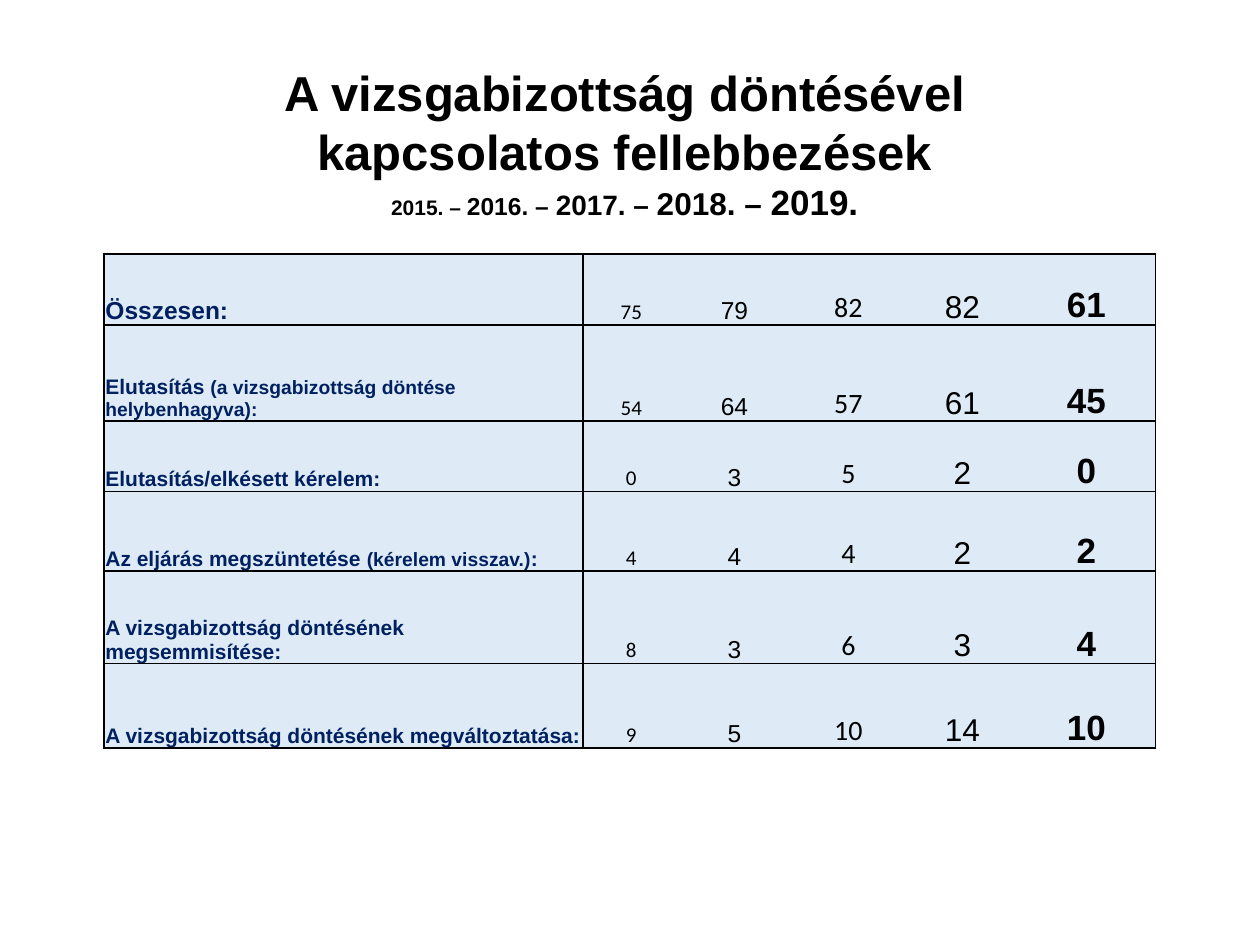
from lxml import etree
from pptx import Presentation
from pptx.dml.color import RGBColor
from pptx.enum.text import MSO_ANCHOR, MSO_AUTO_SIZE, PP_ALIGN
from pptx.oxml.ns import qn
from pptx.util import Pt

LEFT, CENTER = PP_ALIGN.LEFT, PP_ALIGN.CENTER
MIDDLE, BOTTOM = MSO_ANCHOR.MIDDLE, MSO_ANCHOR.BOTTOM
NO_FIT = MSO_AUTO_SIZE.NONE
COLORS = {"ink": "000000", "label": "002060", "cell": "DEEBF7"}
TITLE = "A vizsgabizottság döntésével kapcsolatos fellebbezések"
YEARS = [("2015. – ", 12), ("2016. – ", 14), ("2017. – ", 16),
         ("2018. – ", 18), ("2019.", 20)]
STYLES = [(12, "Calibri", False), (14, "Arial", False), (16, "Calibri", False),
          (18, "Arial", False), (20, "Arial", True)]
WIDTHS = [273.6, 55.3, 62.6, 67.6, 62.7, 79.2]
ROWS = [
    (40.5, [("Összesen:", 14)], [75, 79, 82, 82, 61]),
    (54.8, [("Elutasítás ", 12), ("(a vizsgabizottság döntése helybenhagyva):", 11)],
     [54, 64, 57, 61, 45]),
    (40.3, [("Elutasítás/elkésett kérelem:", 12)], [0, 3, 5, 2, 0]),
    (45.6, [("Az eljárás megszüntetése ", 12), ("(kérelem visszav.)", 11), (":", 12)],
     [4, 4, 4, 2, 2]),
    (52.8, [("A vizsgabizottság döntésének megsemmisítése:", 12)], [8, 3, 6, 3, 4]),
    (48.3, [("A vizsgabizottság döntésének megváltoztatása:", 12)], [9, 5, 10, 14, 10]),
]


class Deck:
    def __init__(self):
        self.prs = Presentation()
        self.prs.slide_width, self.prs.slide_height = Pt(720), Pt(540)
        self.slide = self.prs.slides.add_slide(self.prs.slide_layouts[5])

    def run(self, para, text, size, font="Arial", bold=True, color="ink"):
        run = para.add_run()
        run.text = text
        run.font.size, run.font.name, run.font.bold = Pt(size), font, bold
        run.font.color.rgb = RGBColor.from_string(COLORS[color])

    def title(self, x, y, w, h, text, years):
        box = self.slide.shapes.title
        box.left, box.top, box.width, box.height = Pt(x), Pt(y), Pt(w), Pt(h)
        frame = box.text_frame
        frame.word_wrap, frame.auto_size = True, NO_FIT
        frame.vertical_anchor = MIDDLE
        para = frame.paragraphs[0]
        para.alignment = CENTER
        self.run(para, text, 28)
        para.add_line_break()
        for year, size in years:
            self.run(para, year, size)

    def border(self, cell, sides):
        props = cell._tc.get_or_add_tcPr()
        for side in "LRTB":
            line = etree.SubElement(props, qn(f"a:ln{side}"), w=str(Pt(1)))
            if side in sides:
                fill = etree.SubElement(line, qn("a:solidFill"))
                etree.SubElement(fill, qn("a:srgbClr"), val=COLORS["ink"])
            else:
                etree.SubElement(line, qn("a:noFill"))

    def cell(self, cell, sides, align):
        self.border(cell, sides)
        cell.fill.solid()
        cell.fill.fore_color.rgb = RGBColor.from_string(COLORS["cell"])
        cell.margin_left = cell.margin_right = cell.margin_top = Pt(0.75)
        cell.margin_bottom = Pt(0)
        cell.vertical_anchor = BOTTOM
        para = cell.text_frame.paragraphs[0]
        para.alignment = align
        return para

    def table(self, x, y, widths, rows):
        high = sum(row[0] for row in rows)
        table = self.slide.shapes.add_table(
            len(rows), len(widths), Pt(x), Pt(y), Pt(sum(widths)), Pt(high)).table
        table.first_row = table.horz_banding = False
        for col, width in zip(table.columns, widths):
            col.width = Pt(width)
        sides = ["LRTB", "LTB"] + ["TB"] * (len(widths) - 3) + ["RTB"]
        for line, (height, label, values) in zip(table.rows, rows):
            line.height = Pt(height)
            head, *cells = line.cells
            para = self.cell(head, sides[0], LEFT)
            for text, size in label:
                self.run(para, text, size, color="label")
            for cell, edge, value, style in zip(cells, sides[1:], values, STYLES):
                self.run(self.cell(cell, edge, CENTER), str(value), *style)


def main():
    deck = Deck()
    deck.title(133, 49, 448, 65, TITLE, YEARS)
    deck.table(59.5, 145.2, WIDTHS, ROWS)
    deck.prs.save("out.pptx")


if __name__ == "__main__":
    main()
